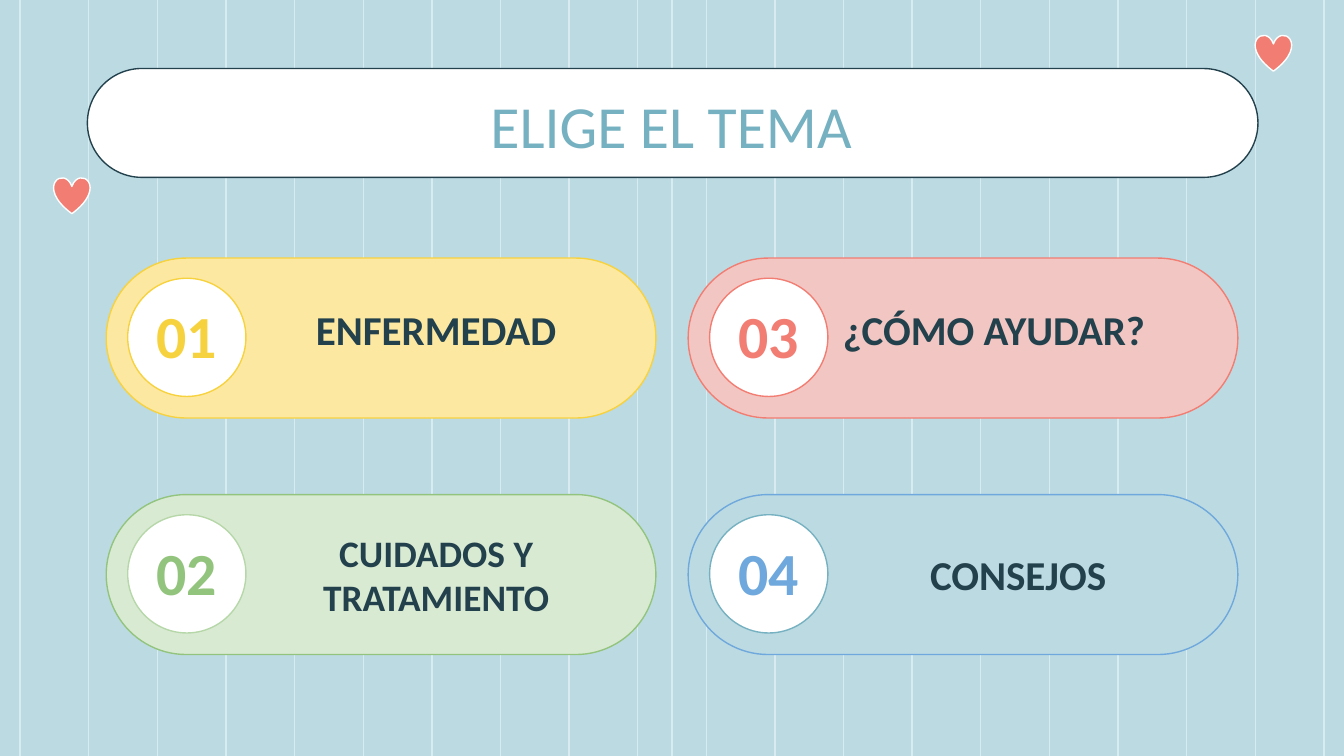
from dataclasses import dataclass

from lxml import etree
from pptx import Presentation
from pptx.dml.color import RGBColor
from pptx.enum.shapes import MSO_CONNECTOR, MSO_SHAPE
from pptx.enum.text import MSO_ANCHOR, PP_ALIGN
from pptx.oxml.ns import qn
from pptx.util import Inches, Pt

WIDTH = 10
HEIGHT = WIDTH * 9 / 16
FONT = "Calibri"
COLORS = {
    "background": "BCDAE2",
    "stripe": "D8EBF0",
    "white": "FFFFFF",
    "ink": "23414C",
    "teal": "76B1C1",
    "coral": "F27D72",
    "pink": "F2C6C2",
    "yellow": "F7D23F",
    "cream": "FDE8A1",
    "green": "93C47D",
    "leaf": "B6D7A8",
    "mint": "D9EAD3",
    "blue": "6FA8DC",
}


@dataclass
class Topic:
    number: str
    label: str
    left: float
    top: float
    fill: str
    accent: str
    ring: str
    label_left: float
    label_top: float
    label_size: int = 22


LEFT, RIGHT = 0.79, 5.12
UPPER, LOWER = 1.92, 3.68
TOPICS = [
    Topic("01", "ENFERMEDAD", LEFT, UPPER, "cream", "yellow", "yellow", 1.9, 2.24),
    Topic("02", "CUIDADOS Y TRATAMIENTO", LEFT, LOWER, "mint", "green", "leaf", 1.9, 4.07, 20),
    Topic("03", "¿CÓMO AYUDAR?", RIGHT, UPPER, "pink", "coral", "coral", 6.05, 2.24),
    Topic("04", "CONSEJOS", RIGHT, LOWER, "background", "blue", "teal", 6.23, 4.07),
]


def rgb(name: str) -> RGBColor:
    return RGBColor.from_string(COLORS[name])


def add_stripe(slide, x: float) -> None:
    stripe = slide.shapes.add_connector(
        MSO_CONNECTOR.STRAIGHT, Inches(x), 0, Inches(x), Inches(HEIGHT))
    stripe.line.color.rgb = rgb("stripe")
    stripe.line.width = Pt(0.75)
    etree.SubElement(stripe._element.spPr, qn("a:effectLst"))


def add_outlined(slide, kind: MSO_SHAPE, left: float, top: float,
                 width: float, height: float, fill: str, outline: str) -> None:
    shape = slide.shapes.add_shape(
        kind, Inches(left), Inches(top), Inches(width), Inches(height))
    if kind == MSO_SHAPE.ROUNDED_RECTANGLE:
        shape.adjustments[0] = 0.5
    shape.shadow.inherit = False
    shape.fill.solid()
    shape.fill.fore_color.rgb = rgb(fill)
    shape.line.color.rgb = rgb(outline)
    shape.line.width = Pt(0.75)


def add_text(slide, text: str, left: float, top: float, width: float, height: float,
             size: int, color: str, bold: bool = True,
             anchor: MSO_ANCHOR = MSO_ANCHOR.MIDDLE) -> None:
    box = slide.shapes.add_textbox(
        Inches(left), Inches(top), Inches(width), Inches(height))
    frame = box.text_frame
    frame.word_wrap = True
    frame.vertical_anchor = anchor
    frame.margin_left = frame.margin_right = Inches(0.1)
    frame.margin_top = frame.margin_bottom = Inches(0.1)
    frame.text = text
    paragraph = frame.paragraphs[0]
    paragraph.alignment = PP_ALIGN.CENTER
    font = paragraph.runs[0].font
    font.name = FONT
    font.size = Pt(size)
    font.bold = bold
    font.color.rgb = rgb(color)


def add_topic(slide, topic: Topic) -> None:
    add_outlined(slide, MSO_SHAPE.ROUNDED_RECTANGLE, topic.left, topic.top,
                 4.09, 1.19, topic.fill, topic.accent)
    add_outlined(slide, MSO_SHAPE.OVAL, topic.left + 0.16, topic.top + 0.15,
                 0.88, 0.88, "white", topic.ring)
    add_text(slide, topic.number, topic.left + 0.18, topic.top + 0.28,
             0.84, 0.58, 32, topic.accent)
    add_text(slide, topic.label, topic.label_left, topic.label_top,
             2.69, 0.41, topic.label_size, "ink")


def main() -> None:
    presentation = Presentation()
    presentation.slide_width = Inches(WIDTH)
    presentation.slide_height = Inches(HEIGHT)
    slide = presentation.slides.add_slide(presentation.slide_layouts[6])
    slide.background.fill.solid()
    slide.background.fill.fore_color.rgb = rgb("background")

    # Striped backdrop: twenty even stripes and one on the centre line
    for index in range(20):
        add_stripe(slide, 0.15 + index * 9.7 / 19)
    add_stripe(slide, WIDTH / 2)

    # Title banner with hearts
    add_outlined(slide, MSO_SHAPE.ROUNDED_RECTANGLE, 0.65, 0.51, 8.71, 0.81, "white", "ink")
    for left, top in [(0.4, 1.32), (9.34, 0.26)]:
        add_outlined(slide, MSO_SHAPE.HEART, left, top, 0.27, 0.27, "coral", "white")
    add_text(slide, "ELIGE EL TEMA", 1.31, 0.56, 7.37, 0.65, 32, "teal",
             bold=False, anchor=MSO_ANCHOR.TOP)

    # Topic cards
    for topic in TOPICS:
        add_topic(slide, topic)

    presentation.save("out.pptx")


if __name__ == "__main__":
    main()
